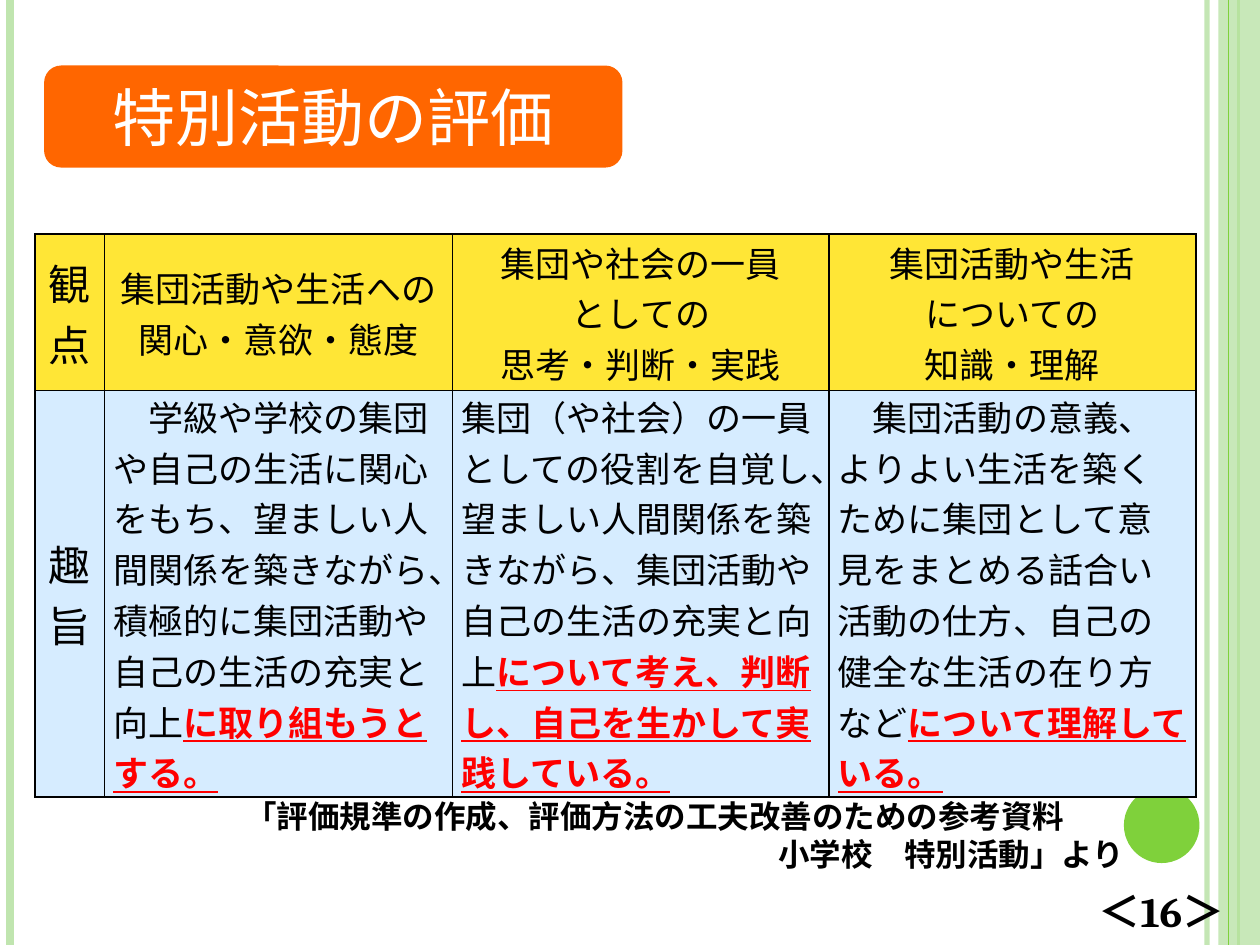
from dataclasses import dataclass

from lxml import etree
from pptx import Presentation
from pptx import util as u
from pptx.dml.color import RGBColor
from pptx.enum import shapes, text
from pptx.oxml import ns

COLORS = {
    "pale": "C0E5AF", "green": "7FD13B", "orange": "FF6600", "yellow": "FFE636",
    "blue": "D6ECFF", "red": "FF0000", "black": "000000", "white": "FFFFFF",
}
SERIF, SANS = "Cambria", "Noto Sans CJK JP"
CENTER, RIGHT = text.PP_ALIGN.CENTER, text.PP_ALIGN.RIGHT
MIDDLE = text.MSO_ANCHOR.MIDDLE
PAGE_HEIGHT = 7.5


@dataclass
class Stripe:
    x: float
    color: str
    width: float
    opacity: int = 100


@dataclass
class Viewpoint:
    width: float
    heading: list
    body: str
    emphasis: str


STRIPES_BEHIND = [Stripe(9.58, "pale", 3, 93), Stripe(0.08, "pale", 4.5), Stripe(9.83, "green", 1.5)]
STRIPE_FRONT = Stripe(9.75, "green", 0.75)
VIEWPOINTS = [
    Viewpoint(2.76, ["集団活動や生活への", "関心・意欲・態度"],
              "　学級や学校の集団や自己の生活に関心をもち、望ましい人間関係を築きながら、積極的に集団活動や自己の生活の充実と向上",
              "に取り組もうとする。"),
    Viewpoint(2.99, ["集団や社会の一員", "としての", "思考・判断・実践"],
              "集団（や社会）の一員としての役割を自覚し、望ましい人間関係を築きながら、集団活動や自己の生活の充実と向上",
              "について考え、判断し、自己を生かして実践している。"),
    Viewpoint(2.91, ["集団活動や生活", "についての", "知識・理解"],
              "　集団活動の意義、よりよい生活を築くために集団として意見をまとめる話合い活動の仕方、自己の健全な生活の在り方など",
              "について理解している。"),
]


def rgb(name: str) -> RGBColor:
    return RGBColor.from_string(COLORS[name])


def set_opacity(element, percent: int) -> None:
    if percent < 100:
        color = next(element.iter(ns.qn("a:srgbClr")))
        etree.SubElement(color, ns.qn("a:alpha"), val=str(percent * 1000))


def write(paragraph, content: str, *, size: float, font=SERIF, color="black",
          bold=False, underline=False, align=None) -> None:
    if align is not None:
        paragraph.alignment = align
    run = paragraph.add_run()
    run.text = content
    run.font.size = u.Pt(size)
    run.font.name = font
    run.font.bold = bold
    run.font.underline = underline
    run.font.color.rgb = rgb(color)
    etree.SubElement(run.font._element, ns.qn("a:ea"), typeface=SANS)


def write_lines(frame, lines: list, **style) -> None:
    for index, line in enumerate(lines):
        paragraph = frame.add_paragraph() if index else frame.paragraphs[0]
        write(paragraph, line, **style)


def add_stripe(slide, stripe: Stripe) -> None:
    x = u.Inches(stripe.x)
    line = slide.shapes.add_connector(shapes.MSO_CONNECTOR.STRAIGHT, x, 0, x, u.Inches(PAGE_HEIGHT))
    line.line.color.rgb = rgb(stripe.color)
    line.line.width = u.Pt(stripe.width)
    properties = line._element.spPr
    set_opacity(properties, stripe.opacity)
    etree.SubElement(properties, ns.qn("a:effectLst"))


def add_block(slide, kind, box: tuple, color: str, opacity: int = 100):
    shape = slide.shapes.add_shape(kind, *map(u.Inches, box))
    shape.shadow.inherit = False
    shape.fill.solid()
    shape.fill.fore_color.rgb = rgb(color)
    shape.line.fill.background()
    set_opacity(shape._element.spPr, opacity)
    return shape


def add_text_box(slide, box: tuple):
    frame = slide.shapes.add_textbox(*map(u.Inches, box)).text_frame
    frame.word_wrap = True
    return frame


def set_borders(cell, widths: dict) -> None:
    properties = cell._tc.get_or_add_tcPr()
    for index, (side, width) in enumerate(widths.items()):
        line = etree.Element(ns.qn(f"a:ln{side}"), w=str(u.Pt(width)))
        fill = etree.SubElement(line, ns.qn("a:solidFill"))
        etree.SubElement(fill, ns.qn("a:srgbClr"), val=COLORS["black"])
        properties.insert(index, line)


def add_table(slide) -> None:
    columns = [0.55] + [viewpoint.width for viewpoint in VIEWPOINTS]
    rows = [1.24, 2.88]
    box = (0.28, 1.86, sum(columns), sum(rows))
    table = slide.shapes.add_table(len(rows), len(columns), *map(u.Inches, box)).table
    for column, width in zip(table.columns, columns):
        column.width = u.Inches(width)
    for row, height in zip(table.rows, rows):
        row.height = u.Inches(height)

    for row in range(len(rows)):
        for column in range(len(columns)):
            cell = table.cell(row, column)
            cell.margin_left = cell.margin_right = u.Inches(0.07)
            cell.margin_top = cell.margin_bottom = 0
            cell.fill.solid()
            cell.fill.fore_color.rgb = rgb("blue" if row else "yellow")
            if row == 0 or column == 0:
                cell.vertical_anchor = MIDDLE
            outer = {"L": column == 0, "R": column == len(columns) - 1,
                     "T": row == 0, "B": row == len(rows) - 1}
            set_borders(cell, {side: 1.5 if edge else 1 for side, edge in outer.items()})

    for row, label in enumerate(["観点", "趣旨"]):
        write_lines(table.cell(row, 0).text_frame, [label], size=24, align=CENTER)
    for column, viewpoint in enumerate(VIEWPOINTS, 1):
        write_lines(table.cell(0, column).text_frame, viewpoint.heading, size=20, align=CENTER)
        paragraph = table.cell(1, column).text_frame.paragraphs[0]
        write(paragraph, viewpoint.body, size=20, font=SANS)
        write(paragraph, viewpoint.emphasis, size=20, font=SANS, color="red", bold=True, underline=True)


def main() -> None:
    presentation = Presentation()
    presentation.slide_width = u.Inches(10)
    presentation.slide_height = u.Inches(PAGE_HEIGHT)
    slide = presentation.slides.add_slide(presentation.slide_layouts[6])

    for stripe in STRIPES_BEHIND:
        add_stripe(slide, stripe)
    add_block(slide, shapes.MSO_SHAPE.RECTANGLE, (9.67, 0, 0.33, PAGE_HEIGHT), "pale", 87)
    add_stripe(slide, STRIPE_FRONT)
    add_block(slide, shapes.MSO_SHAPE.OVAL, (8.92, 6.25, 0.6, 0.6), "green")

    title = add_block(slide, shapes.MSO_SHAPE.ROUNDED_RECTANGLE, (0.35, 0.52, 4.59, 0.81), "orange")
    title.text_frame.word_wrap = False
    title.text_frame.vertical_anchor = MIDDLE
    write_lines(title.text_frame, ["特別活動の評価"], size=36, color="white", align=CENTER)

    add_table(slide)

    citation = add_text_box(slide, (1.85, 6.27, 7.17, 0.71))
    citation.vertical_anchor = MIDDLE
    write_lines(citation, ["「評価規準の作成、評価方法の工夫改善のための参考資料", "小学校　特別活動」より"],
                size=18, font=SANS, bold=True)
    citation.paragraphs[1].alignment = RIGHT
    for paragraph in citation.paragraphs:
        paragraph.line_spacing = u.Pt(22)

    page_number = add_text_box(slide, (8.62, 6.98, 1.42, 0.5))
    write_lines(page_number, ["＜16＞"], size=24, bold=True)

    presentation.save("out.pptx")


if __name__ == "__main__":
    main()
